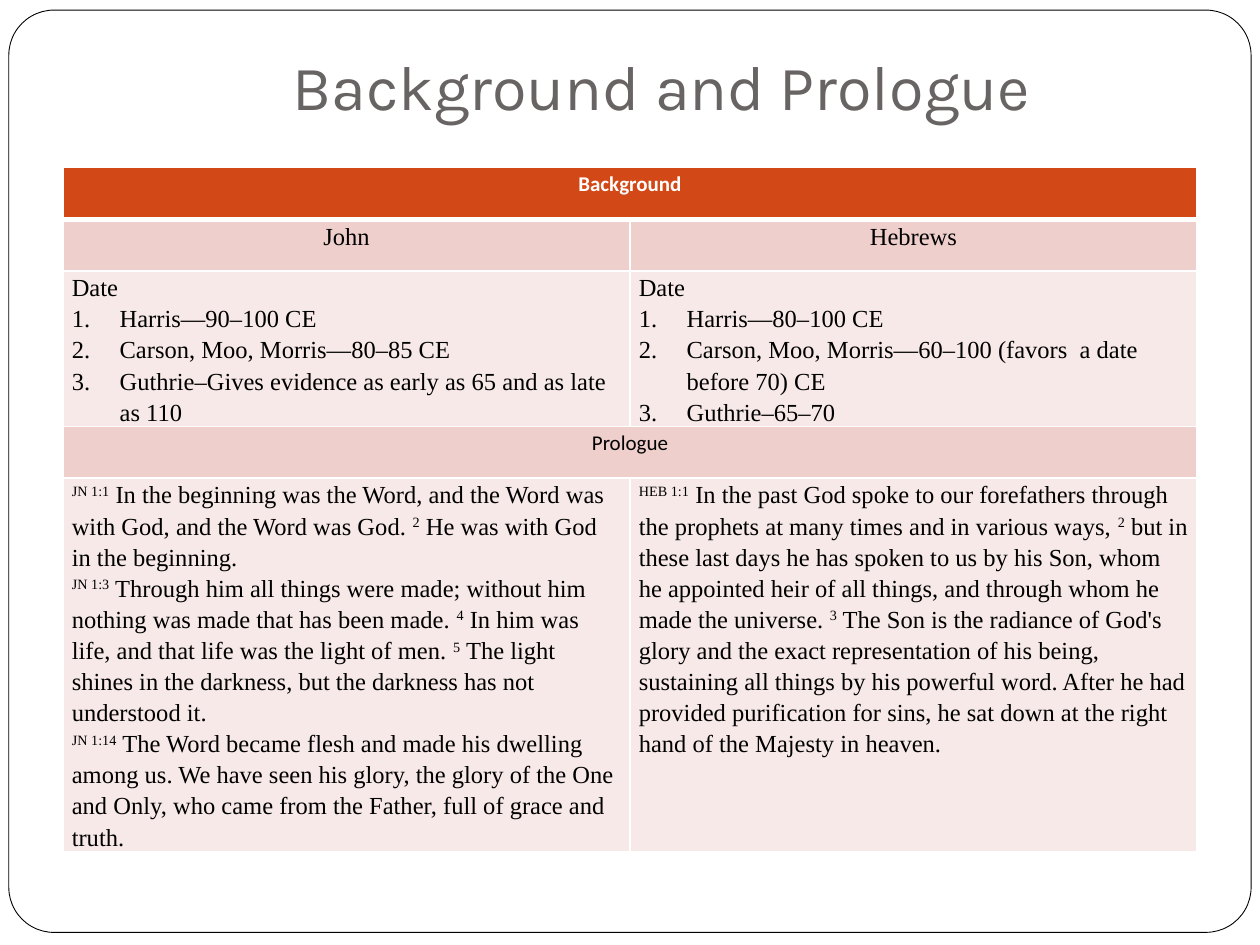
from lxml import etree
from pptx import Presentation
from pptx.dml.color import RGBColor
from pptx.enum.shapes import MSO_SHAPE
from pptx.enum.text import MSO_ANCHOR, MSO_AUTO_SIZE, PP_ALIGN
from pptx.oxml.ns import qn
from pptx.util import Inches, Pt

ROUNDED = MSO_SHAPE.ROUNDED_RECTANGLE
CENTER, LEFT = PP_ALIGN.CENTER, PP_ALIGN.LEFT

COLORS = {"white": "FFFFFF", "black": "000000", "title": "696464",
          "header": "D34817", "band": "EFCFCC", "body": "F7E9E8"}

TITLE = "Background and Prologue"

# Text between carets is superscript.
JOHN_DATES = ["Harris—90–100 CE", "Carson, Moo, Morris—80–85 CE",
              "Guthrie–Gives evidence as early as 65 and as late as 110"]
HEBREWS_DATES = ["Harris—80–100 CE",
                 "Carson, Moo, Morris—60–100 (favors  a date before 70) CE",
                 "Guthrie–65–70"]
JOHN_PROLOGUE = [
    "^JN 1:1^ In the beginning was the Word, and the Word was with God, "
    "and the Word was God. ^2^ He was with God in the beginning.",
    "^JN 1:3^ Through him all things were made; without him nothing was made "
    "that has been made. ^4^ In him was life, and that life was the light of men. "
    "^5^ The light shines in the darkness, but the darkness has not understood it.",
    "^JN 1:14^ The Word became flesh and made his dwelling among us. We have seen "
    "his glory, the glory of the One and Only, who came from the Father, "
    "full of grace and truth.",
]
HEBREWS_PROLOGUE = [
    "^HEB 1:1^ In the past God spoke to our forefathers through the prophets at many "
    "times and in various ways, ^2^ but in these last days he has spoken to us by his "
    "Son, whom he appointed heir of all things, and through whom he made the universe. "
    "^3^ The Son is the radiance of God's glory and the exact representation of his "
    "being, sustaining all things by his powerful word. After he had provided "
    "purification for sins, he sat down at the right hand of the Majesty in heaven.",
]

HEADING = {"font": "Calibri", "size": 12, "align": CENTER}
BOOK = {"font": "Times New Roman", "size": 14, "align": CENTER}
PASSAGE = {"font": "Times New Roman", "size": 14, "align": LEFT}

# Row height, fill, text style, paragraphs of each cell; one cell spans the row.
ROWS = [
    (0.41, "header", {**HEADING, "color": "white", "bold": True}, [["Background"]]),
    (0.41, "band", BOOK, [["John"], ["Hebrews"]]),
    (1.23, "body", {**PASSAGE, "numbered": True},
     [["Date", *JOHN_DATES], ["Date", *HEBREWS_DATES]]),
    (0.41, "band", HEADING, [["Prologue"]]),
    (2.95, "body", PASSAGE, [JOHN_PROLOGUE, HEBREWS_PROLOGUE]),
]


def rgb(name):
    return RGBColor.from_string(COLORS[name])


def set_font(r, name, size, color, bold=False):
    r.font.name, r.font.size, r.font.bold = name, Pt(size), bold
    r.font.color.rgb = rgb(color)


def number_paragraph(p):
    pPr = p._p.get_or_add_pPr()
    pPr.set("marL", str(Inches(0.38)))
    pPr.set("indent", str(-Inches(0.38)))
    etree.SubElement(pPr, qn("a:buAutoNum"), type="arabicPeriod")


def add_borders(cell, bottom):
    tcPr = cell._tc.get_or_add_tcPr()
    for side, width in (("L", 1), ("R", 1), ("T", 1), ("B", bottom)):
        ln = etree.SubElement(tcPr, qn(f"a:ln{side}"), w=str(Pt(width)))
        fill = etree.SubElement(ln, qn("a:solidFill"))
        etree.SubElement(fill, qn("a:srgbClr"), val=COLORS["white"])


def fill_cell(cell, paragraphs, style):
    cell.margin_left = cell.margin_right = Inches(0.07)
    cell.margin_top = cell.margin_bottom = 0
    tf = cell.text_frame
    for i, text in enumerate(paragraphs):
        p = tf.add_paragraph() if i else tf.paragraphs[0]
        p.alignment, p.line_spacing = style["align"], 1.15
        if style.get("numbered"):
            if i:
                number_paragraph(p)
            else:
                p.space_before = Pt(6)
        for j, part in enumerate(text.split("^")):
            if part:
                r = p.add_run()
                r.text = part
                set_font(r, style["font"], style["size"],
                         style.get("color", "black"), style.get("bold", False))
                if j % 2:
                    r.font._element.set("baseline", "30000")


def add_title(s):
    title = s.shapes.title
    title.left, title.top = Inches(1), Inches(0.3)
    title.width, title.height = Inches(8.5), Inches(0.78)
    tf = title.text_frame
    tf.auto_size, tf.vertical_anchor = MSO_AUTO_SIZE.NONE, MSO_ANCHOR.BOTTOM
    tf.margin_bottom = Inches(0.1)
    p = tf.paragraphs[0]
    p.alignment = CENTER
    r = p.add_run()
    r.text = TITLE
    set_font(r, "Karla", 36, "title")


def add_frame(s):
    """Draw the rounded page outline behind the title."""
    sp = s.shapes.add_shape(ROUNDED, Inches(0.07), Inches(0.08),
                            Inches(9.86), Inches(7.32))
    sp.adjustments[0] = 0.049
    sp.shadow.inherit = False
    sp.fill.solid()
    sp.fill.fore_color.rgb = rgb("white")
    sp.line.color.rgb = rgb("black")
    sp.line.width = Pt(0.5)
    s.shapes.title.element.addprevious(sp.element)


def add_comparison(s):
    height = sum(row[0] for row in ROWS)
    table = s.shapes.add_table(len(ROWS), 2, Inches(0.5), Inches(1.33),
                               Inches(9), Inches(height)).table
    for i, (row_height, fill, style, cells) in enumerate(ROWS):
        table.rows[i].height = Inches(row_height)
        for j in range(2):
            cell = table.cell(i, j)
            add_borders(cell, 3 if i == 0 else 1)
            cell.fill.solid()
            cell.fill.fore_color.rgb = rgb(fill)
        if len(cells) == 1:
            table.cell(i, 0).merge(table.cell(i, 1))
        for j, paragraphs in enumerate(cells):
            fill_cell(table.cell(i, j), paragraphs, style)


def main():
    prs = Presentation()
    prs.slide_width, prs.slide_height = Inches(10), Inches(7.5)
    s = prs.slides.add_slide(prs.slide_layouts[5])
    add_title(s)
    add_frame(s)
    add_comparison(s)
    prs.save("out.pptx")


if __name__ == "__main__":
    main()
